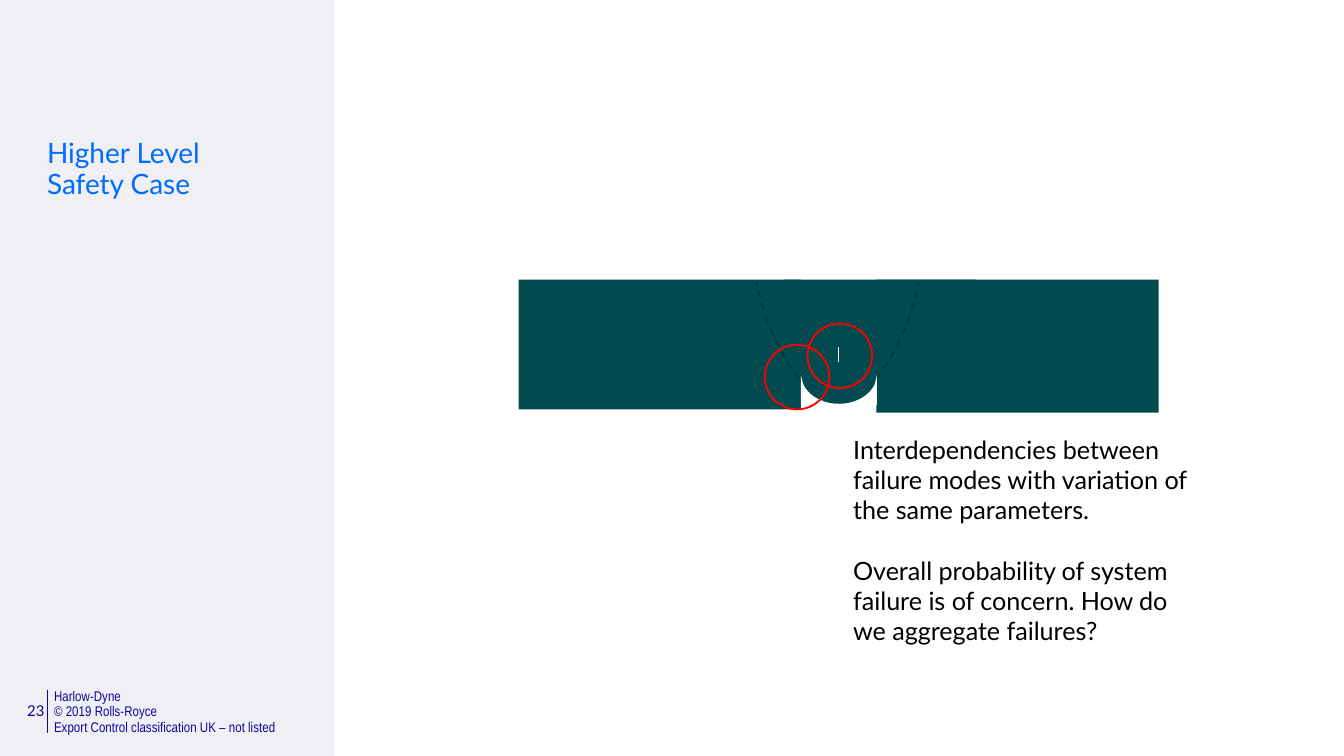
from lxml.etree import SubElement
from pptx import Presentation
from pptx.dml.color import RGBColor
from pptx.enum.dml import MSO_LINE
from pptx.enum.shapes import MSO_CONNECTOR as Wire, MSO_SHAPE as Preset
from pptx.enum.text import MSO_ANCHOR as Anchor, MSO_AUTO_SIZE as Fit, PP_ALIGN as Align
from pptx.oxml.ns import qn
from pptx.util import Pt

# Content
TITLE = "Higher Level Safety Case"
NOTES = [
    "Interdependencies between failure modes with variation of the same parameters.",
    "Overall probability of system failure is of concern. How do we aggregate failures?",
]
FOOTER = ["Harlow-Dyne", "© 2019 Rolls-Royce\vExport Control classification UK – not listed"]
PAGE_NUMBER = "23"

THEME = {
    "panel": "EFEFF4", "paper": "FFFFFF", "metal": "004A50", "hidden": "00373B",
    "alert": "FF0000", "navy": "10069F", "heading": "006DFF", "ink": "000000",
    "font": "Lato", "footer_font": "Arial Narrow",
    "title": 15, "body": 13.5, "number": 8, "footer": 7.5,
}

# Geometry in points: left, top, width, height
WIDTH, HEIGHT = 720, 405
PANEL_WIDTH = 179.5
AXIS = 448.8  # centre line of the groove
PLATES = [
    (Preset.RECTANGLE, (469.5, 149.8, 151.2, 71.3)),
    (Preset.RECTANGLE, (277.9, 149.8, 151.2, 69.5)),
    (Preset.OVAL, (429.1, 184.3, 40.7, 32)),
    (Preset.RECTANGLE, (419.8, 149.8, 103, 56.2)),
]
GAPS = [((429.1, 201.3, 4.3, 16.1), 0), ((466, 201, 3.8, 16.1), 1)]  # box, apex position
RING = 34.6
RING_CENTRES = [(449.9, 190.6), (427, 202)]
# Control points of the hidden edge: distance from the axis, height
HIDDEN_EDGE = [(20.4, 203), (31.2, 190), (40.3, 169), (43.4, 151.2)]
CURVE_STEPS = 16


def colour(name):
    return RGBColor.from_string(THEME[name])


def style_line(line, name, width, dash=None):
    line.color.rgb = colour(name)
    line.width = Pt(width)
    if dash:
        line.dash_style = dash


def add_shape(page, preset, box, fill=None, outline=None):
    shape = page.shapes.add_shape(preset, *map(Pt, box))
    shape.shadow.inherit = False
    if fill:
        shape.fill.solid()
        shape.fill.fore_color.rgb = colour(fill)
    else:
        shape.fill.background()
    if outline:
        style_line(shape.line, outline, 1)
    else:
        shape.line.fill.background()
    return shape


def add_line(page, start, end, name):
    line = page.shapes.add_connector(Wire.STRAIGHT, *map(Pt, start + end))
    style_line(line.line, name, 0.5)
    SubElement(line._element.spPr, qn("a:effectLst"))


def write(box, texts, size, ink, font="font", inset=None, **para_format):
    frame = box.text_frame
    frame.word_wrap, frame.auto_size, frame.vertical_anchor = True, Fit.NONE, Anchor.TOP
    if inset is not None:
        for side in ("left", "top", "right", "bottom"):
            setattr(frame, f"margin_{side}", Pt(inset))
    for index, text in enumerate(texts):
        para = frame.paragraphs[0] if index == 0 else frame.add_paragraph()
        para.text = text
        for name, value in para_format.items():
            if name != "space_before" or index:
                setattr(para, name, value)
        for name, value in {"name": THEME[font], "size": Pt(THEME[size])}.items():
            setattr(para.font, name, value)
        para.font.color.rgb = colour(ink)


def add_text(page, box, texts, size, ink, **options):
    write(page.shapes.add_textbox(*map(Pt, box)), texts, size, ink, **options)


def cubic(points, t):
    """Point at t on a cubic Bezier curve."""
    weights = ((1 - t) ** 3, 3 * t * (1 - t) ** 2, 3 * t**2 * (1 - t), t**3)
    return tuple(sum(w * p[axis] for w, p in zip(weights, points)) for axis in (0, 1))


def add_hidden_edge(page, side):
    """Dashed curve to the left (-1) or right (1) of the axis."""
    curve = [cubic(HIDDEN_EDGE, step / CURVE_STEPS) for step in range(CURVE_STEPS + 1)]
    points = [(Pt(AXIS + side * x), Pt(y)) for x, y in curve]
    builder = page.shapes.build_freeform(*points[0])
    builder.add_line_segments(points[1:], close=False)
    edge = builder.convert_to_shape()
    edge.shadow.inherit = False
    edge.fill.background()
    style_line(edge.line, "hidden", 1, MSO_LINE.DASH)


def add_ring(page, centre):
    x, y = centre
    add_shape(page, Preset.OVAL, (x - RING / 2, y - RING / 2, RING, RING), outline="alert")


def main():
    deck = Presentation()
    deck.slide_width, deck.slide_height = Pt(WIDTH), Pt(HEIGHT)
    page = deck.slides.add_slide(deck.slide_layouts[5])
    page.background.fill.solid()
    page.background.fill.fore_color.rgb = colour("panel")

    title = page.shapes.title
    title.left, title.top, title.width, title.height = map(Pt, (18, 71.3, 140.4, 75.6))
    write(title, [TITLE], "title", "heading", alignment=Align.LEFT, line_spacing=0.9)

    add_line(page, (25.4, 369.5), (25.4, 392.5), "navy")
    add_text(page, (29, 369.5, 160, 24.5), FOOTER, "footer", "navy",
             font="footer_font", inset=0, line_spacing=0.9)
    add_shape(page, Preset.RECTANGLE, (PANEL_WIDTH, 0, WIDTH - PANEL_WIDTH, HEIGHT), "paper")
    add_text(page, (3.6, 372.2, 27.4, 17.3), [PAGE_NUMBER], "number", "navy",
             alignment=Align.RIGHT)

    for preset, box in PLATES:
        add_shape(page, preset, box, "metal")
    for side in (-1, 1):
        add_hidden_edge(page, side)
    add_line(page, (449.3, 185.8), (449.3, 193.7), "paper")
    add_ring(page, RING_CENTRES[0])
    add_text(page, (450, 229, 201.6, 121.7), NOTES, "body", "ink", space_before=Pt(16.2))
    for box, apex in GAPS:
        add_shape(page, Preset.ISOSCELES_TRIANGLE, box, "paper").adjustments[0] = apex
    add_ring(page, RING_CENTRES[1])

    deck.save("out.pptx")


if __name__ == "__main__":
    main()
